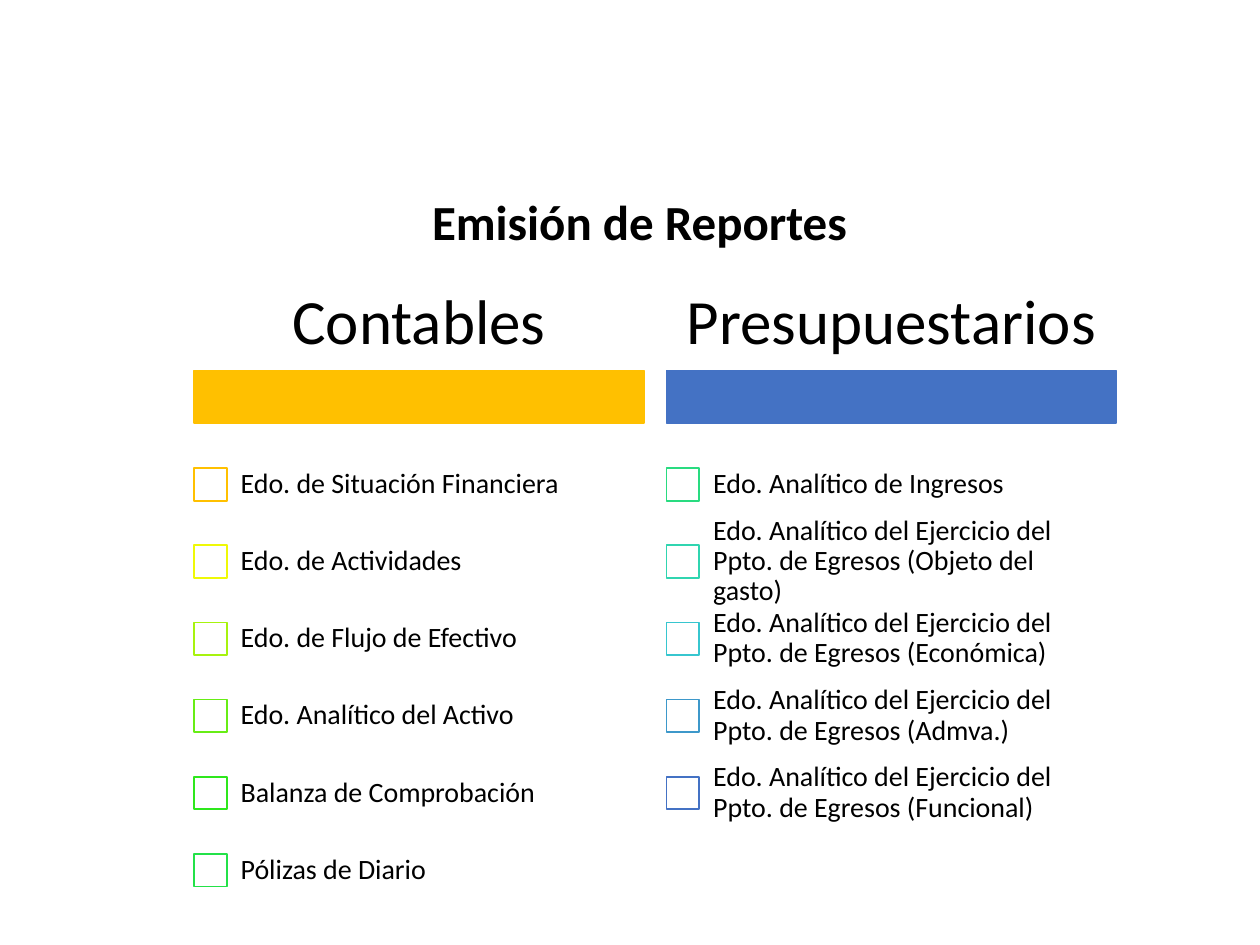
from pptx import Presentation
from pptx.dml.color import RGBColor
from pptx.enum.shapes import MSO_SHAPE
from pptx.enum.text import MSO_ANCHOR, PP_ALIGN
from pptx.util import Inches, Pt

RECT = MSO_SHAPE.RECTANGLE
MIDDLE = MSO_ANCHOR.MIDDLE
CENTER, LEFT = PP_ALIGN.CENTER, PP_ALIGN.LEFT

COLORS = {
    "text": "000000", "white": "FFFFFF",
    "gold": "FFC000", "yellow": "EFF907", "lime": "A7F30E",
    "grass": "67ED15", "green": "2EE71C", "leaf": "23E148",
    "mint": "29DB80", "teal": "30D5B0", "cyan": "37C6CF",
    "sky": "3D98CA", "blue": "4472C4",
}

# Each column: left edge, heading, bar colour, items with their box colour
COLUMNS = [
    (1.54, "Contables", "gold", [
        ("Edo. de Situación Financiera", "gold"),
        ("Edo. de Actividades", "yellow"),
        ("Edo. de Flujo de Efectivo", "lime"),
        ("Edo. Analítico del Activo", "grass"),
        ("Balanza de Comprobación", "green"),
        ("Pólizas de Diario", "leaf"),
    ]),
    (5.29, "Presupuestarios", "blue", [
        ("Edo. Analítico de Ingresos", "mint"),
        ("Edo. Analítico del Ejercicio del Ppto. de Egresos (Objeto del gasto)", "teal"),
        ("Edo. Analítico del Ejercicio del Ppto. de Egresos (Económica)", "cyan"),
        ("Edo. Analítico del Ejercicio del Ppto. de Egresos (Admva.)", "sky"),
        ("Edo. Analítico del Ejercicio del Ppto. de Egresos (Funcional)", "blue"),
    ]),
]
WIDTH = 3.57
BOX = 0.26
INDENT = 0.25
TOP = 3.54
STEP = 0.612

prs = Presentation()
prs.slide_width, prs.slide_height = Inches(10), Inches(7.5)
slide = prs.slides.add_slide(prs.slide_layouts[5])


def add_box(left, top, width, height, fill, line):
    box = slide.shapes.add_shape(
        RECT, Inches(left), Inches(top), Inches(width), Inches(height))
    box.shadow.inherit = False
    box.fill.solid()
    box.fill.fore_color.rgb = RGBColor.from_string(COLORS[fill])
    box.line.color.rgb = RGBColor.from_string(COLORS[line])
    box.line.width = Pt(1)


def set_text(shape, text, size, align, pad_x, pad_y, spacing=0.9):
    frame = shape.text_frame
    frame.text = text
    frame.word_wrap = True
    frame.vertical_anchor = MIDDLE
    frame.margin_left = frame.margin_right = Inches(pad_x)
    frame.margin_top = frame.margin_bottom = Inches(pad_y)
    para = frame.paragraphs[0]
    para.alignment = align
    para.line_spacing = spacing
    font = para.runs[0].font
    font.name = "Calibri"
    font.size = Pt(size)
    font.color.rgb = RGBColor.from_string(COLORS["text"])


# Title
title = slide.shapes.title
title.left, title.top = Inches(1.06), Inches(1.47)
title.width, title.height = Inches(8.03), Inches(0.57)
set_text(title, "Emisión de Reportes", 28, CENTER, 0.1, 0.05, 1.0)
title.text_frame.paragraphs[0].runs[0].font.bold = True

for left, name, color, items in COLUMNS:
    # Heading and bar
    add_box(left, 2.94, WIDTH, 0.42, color, color)
    head = slide.shapes.add_textbox(
        Inches(left), Inches(2.19), Inches(WIDTH), Inches(0.76))
    set_text(head, name, 36, CENTER, 0.07, 0.05)

    # List of reports
    for row, (text, line) in enumerate(items):
        top = TOP + row * STEP
        add_box(left, top + (STEP - BOX) / 2, BOX, BOX, "white", line)
        label = slide.shapes.add_textbox(
            Inches(left + INDENT), Inches(top),
            Inches(WIDTH - INDENT), Inches(STEP))
        set_text(label, text, 16, LEFT, 0.12, 0.12)

prs.save("out.pptx")
